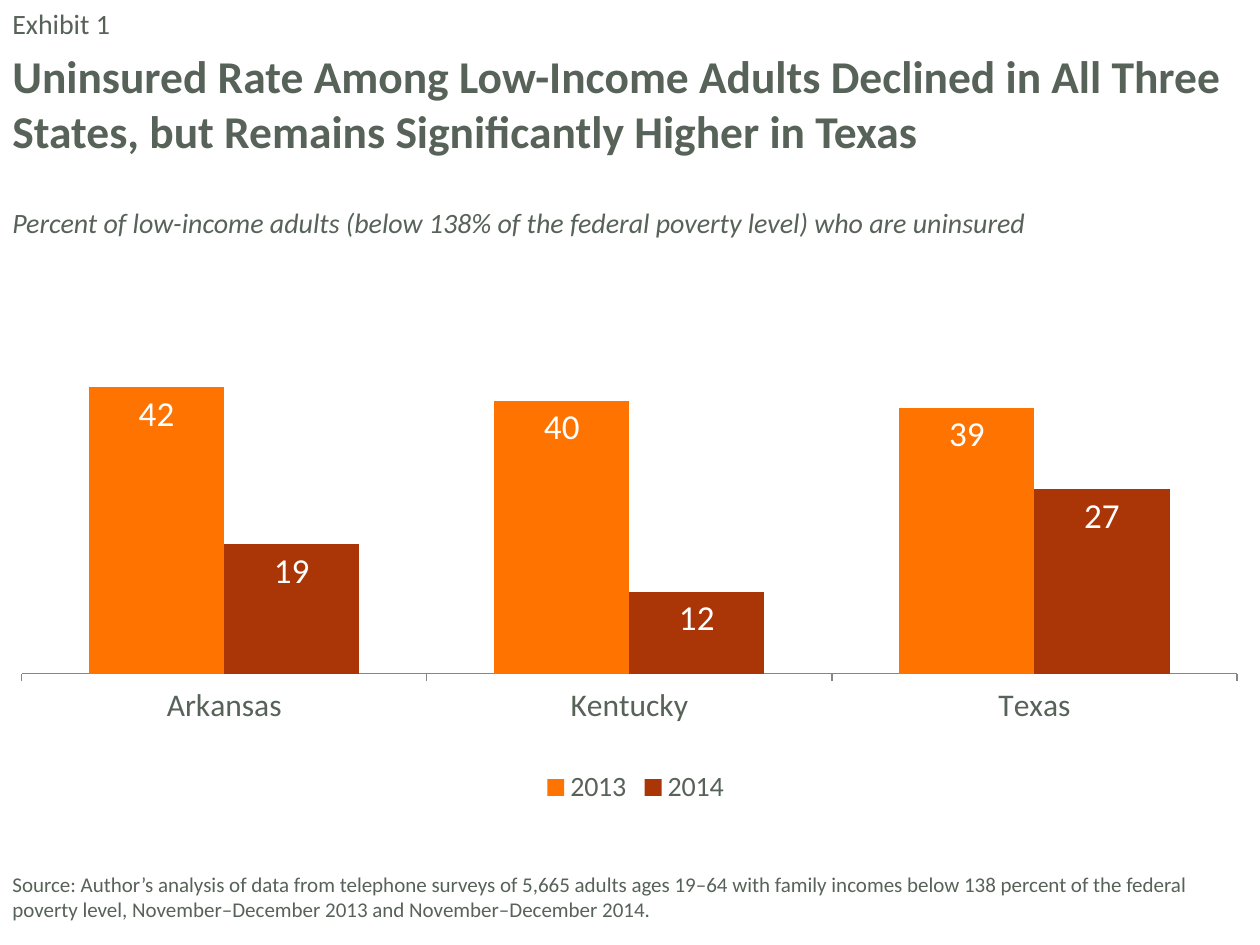
from dataclasses import dataclass

from lxml.etree import SubElement
from pptx import Presentation
from pptx.chart.data import CategoryChartData
from pptx.dml.color import RGBColor
from pptx.enum.chart import XL_CHART_TYPE as ChartType
from pptx.enum.chart import XL_LABEL_POSITION as LabelPosition
from pptx.enum.chart import XL_LEGEND_POSITION as LegendPosition
from pptx.enum.chart import XL_TICK_LABEL_POSITION as TickLabelPosition
from pptx.enum.chart import XL_TICK_MARK as TickMark
from pptx.enum.text import MSO_ANCHOR as Anchor
from pptx.oxml.ns import qn
from pptx.util import Pt

FONT = "Calibri"
SLATE = RGBColor(0x57, 0x62, 0x58)
ORANGE = RGBColor(0xFF, 0x73, 0x00)
RUST = RGBColor(0xAA, 0x36, 0x07)
WHITE = RGBColor(0xFF, 0xFF, 0xFF)
AXIS_GRAY = RGBColor(0x86, 0x86, 0x86)


@dataclass
class Area:
    left: float
    top: float
    width: float
    height: float

    def lengths(self) -> tuple:
        return Pt(self.left), Pt(self.top), Pt(self.width), Pt(self.height)


@dataclass
class YearSeries:
    name: str
    values: tuple
    color: RGBColor


STATES = ("Arkansas", "Kentucky", "Texas")
YEARS = (
    YearSeries("2013", (42, 40, 39), ORANGE),
    YearSeries("2014", (19, 12, 27), RUST),
)


def style_font(font, size: float, color: RGBColor = SLATE,
               bold: bool = False, italic: bool = False) -> None:
    font.name = FONT
    font.size = Pt(size)
    font.color.rgb = color
    font.bold = bold
    font.italic = italic


def add_text(page, area: Area, text: str, *, size: float, bold: bool = False,
             italic: bool = False, anchor=Anchor.TOP) -> None:
    frame = page.shapes.add_textbox(*area.lengths()).text_frame
    frame.word_wrap = True
    frame.vertical_anchor = anchor
    span = frame.paragraphs[0].add_run()
    span.text = text
    style_font(span.font, size, bold=bold, italic=italic)


def set_plot_area(chart, **fractions: float) -> None:
    """Fix the inner plot area as fractions of the chart frame."""
    plot_area = chart.plots[0]._element.getparent()
    layout = plot_area.find(qn("c:layout"))
    if layout is None:
        layout = SubElement(plot_area, qn("c:layout"))
        plot_area.insert(0, layout)
    manual = SubElement(layout, qn("c:manualLayout"))
    settings = {"layoutTarget": "inner", "xMode": "edge", "yMode": "edge", **fractions}
    for tag, value in settings.items():
        SubElement(manual, qn(f"c:{tag}")).set("val", str(value))


def add_rate_chart(page, area: Area) -> None:
    rates = CategoryChartData(number_format="0")
    rates.categories = STATES
    for year in YEARS:
        rates.add_series(year.name, year.values)
    chart = page.shapes.add_chart(
        ChartType.COLUMN_CLUSTERED, *area.lengths(), rates).chart
    chart.has_title = False
    style_font(chart.font, 16)
    set_plot_area(chart, x=0, y=0, w=0.99, h=0.75)

    # Columns and their labels
    plot = chart.plots[0]
    plot.gap_width = 100
    plot.overlap = 0
    plot.vary_by_categories = False
    for series, year in zip(plot.series, YEARS):
        series.format.fill.solid()
        series.format.fill.fore_color.rgb = year.color
        series.invert_if_negative = False
        labels = series.data_labels
        labels.show_value = True
        labels.position = LabelPosition.INSIDE_END
        labels.number_format = "0"
        labels.number_format_is_linked = False
        style_font(labels.font, 20, WHITE)

    # Axes
    states = chart.category_axis
    states.major_tick_mark = TickMark.OUTSIDE
    states.tick_label_position = TickLabelPosition.LOW
    states.format.line.color.rgb = AXIS_GRAY
    style_font(states.tick_labels.font, 18)
    percent = chart.value_axis
    percent.minimum_scale = 0
    percent.maximum_scale = 60
    percent.major_unit = 10
    percent.has_major_gridlines = False
    percent.visible = False

    # Legend
    chart.has_legend = True
    chart.legend.position = LegendPosition.BOTTOM
    chart.legend.include_in_layout = True
    style_font(chart.legend.font, 16)


def main() -> None:
    deck = Presentation()
    deck.slide_width, deck.slide_height = Pt(720), Pt(540)
    page = deck.slides.add_slide(deck.slide_layouts[6])

    # Headings
    add_text(page, Area(0, 0, 720, 24), "Exhibit 1", size=16)
    add_text(page, Area(0, 24, 720, 70.5),
             "Uninsured Rate Among Low-Income Adults Declined in All Three States, "
             "but Remains Significantly Higher in Texas", size=26, bold=True)
    add_text(page, Area(0, 114, 610.5, 26.5),
             "Percent of low-income adults (below 138% of the federal poverty level) "
             "who are uninsured", size=16, italic=True)

    # Chart
    add_rate_chart(page, Area(12, 151, 702, 312))

    # Source note
    add_text(page, Area(0, 482.5, 708, 48),
             "Source: Author’s analysis of data from telephone surveys of 5,665 adults "
             "ages 19–64 with family incomes below 138 percent of the federal poverty "
             "level, November–December 2013 and November–December 2014.",
             size=12, anchor=Anchor.BOTTOM)

    deck.save("out.pptx")


if __name__ == "__main__":
    main()
